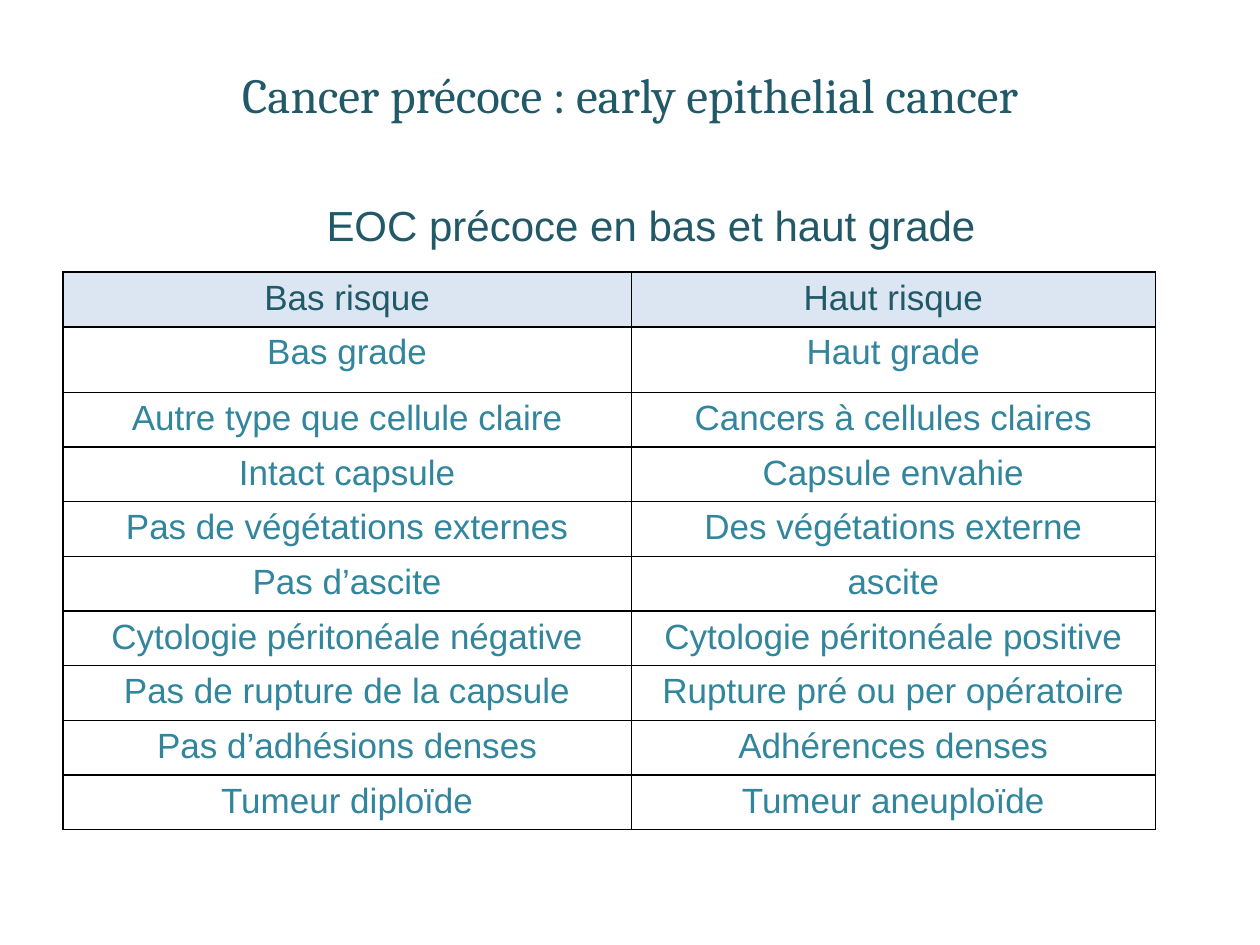
"""Build the slide comparing low and high risk early epithelial cancer."""
from dataclasses import dataclass

import pptx
import pptx.dml.color
import pptx.enum.text
import pptx.oxml
import pptx.oxml.ns
import pptx.util
from pptx.util import Pt


@dataclass(frozen=True)
class Theme:
    """Colours, fonts and type sizes of the slide."""
    dark: str = "215968"
    teal: str = "31859C"
    header: str = "DCE6F2"
    border: str = "000000"
    title_font: str = "Cambria"
    body_font: str = "Arial"
    title_size: int = 28
    subtitle_size: int = 24
    cell_size: int = 20


THEME = Theme()
ROWS = [
    ("Bas risque", "Haut risque"),
    ("Bas grade", "Haut grade"),
    ("Autre type que cellule claire", "Cancers à cellules claires"),
    ("Intact capsule", "Capsule envahie"),
    ("Pas de végétations externes", "Des végétations externe"),
    ("Pas d’ascite", "ascite"),
    ("Cytologie péritonéale négative", "Cytologie péritonéale positive"),
    ("Pas de rupture de la capsule", "Rupture pré ou per opératoire"),
    ("Pas d’adhésions denses", "Adhérences denses"),
    ("Tumeur diploïde", "Tumeur aneuploïde"),
]
COL_WIDTHS = (324.75, 299.5)
ROW_HEIGHT = 31.25
TALL_ROW, TALL_HEIGHT = 1, 37.5


def rgb(value):
    """Return the colour for a hex string."""
    return pptx.dml.color.RGBColor.from_string(value)


def write(tf, text, *, size, color=THEME.dark, font=THEME.body_font,
          line_spacing=None, space_before=None):
    """Write one centred, formatted paragraph into a text frame."""
    p = tf.paragraphs[0]
    p.alignment = pptx.enum.text.PP_ALIGN.CENTER
    p.line_spacing = line_spacing
    p.space_before = space_before
    r = p.add_run()
    r.text = text
    r.font.name = font
    r.font.size = Pt(size)
    r.font.color.rgb = rgb(color)


def add_text(s, text, box, anchor, **fmt):
    """Add a wrapping text box at box (left, top, width, height)."""
    tf = s.shapes.add_textbox(*map(Pt, box)).text_frame
    tf.word_wrap = True
    tf.vertical_anchor = anchor
    write(tf, text, **fmt)


def set_borders(cell, color, width):
    """Draw a solid line on all four sides of a cell."""
    tcPr = cell._tc.get_or_add_tcPr()
    for i, side in enumerate(("lnL", "lnR", "lnT", "lnB")):
        tcPr.insert(i, pptx.oxml.parse_xml(
            f'<a:{side} {pptx.oxml.ns.nsdecls("a")} w="{Pt(width)}">'
            f'<a:solidFill><a:srgbClr val="{color}"/></a:solidFill></a:{side}>'))


def fill_cell(cell, text, header):
    """Style a table cell as header or body and write its text."""
    if header:
        cell.fill.solid()
        cell.fill.fore_color.rgb = rgb(THEME.header)
    else:
        cell.fill.background()
    set_borders(cell, THEME.border, 1)
    write(cell.text_frame, text, size=THEME.cell_size, space_before=Pt(1),
          color=THEME.dark if header else THEME.teal)


def add_risk_table(s, left, top):
    """Add the two-column risk table."""
    heights = [TALL_HEIGHT if i == TALL_ROW else ROW_HEIGHT
               for i in range(len(ROWS))]
    table = s.shapes.add_table(len(ROWS), len(COL_WIDTHS), Pt(left), Pt(top),
                               Pt(sum(COL_WIDTHS)), Pt(sum(heights))).table
    table.horz_banding = False
    for col, width in zip(table.columns, COL_WIDTHS):
        col.width = Pt(width)
    for i, (row, height, texts) in enumerate(zip(table.rows, heights, ROWS)):
        row.height = Pt(height)
        for cell, text in zip(row.cells, texts):
            fill_cell(cell, text, header=i == 0)


def main():
    """Build and save the slide."""
    prs = pptx.Presentation()
    prs.slide_width, prs.slide_height = Pt(720), Pt(540)
    s = prs.slides.add_slide(prs.slide_layouts[6])
    anchors = pptx.enum.text.MSO_ANCHOR
    add_text(s, "EOC précoce en bas et haut grade", (36, 102, 672, 45),
             anchors.TOP, size=THEME.subtitle_size, line_spacing=1.3)
    add_risk_table(s, 36, 155.5)
    add_text(s, "Cancer précoce : early epithelial cancer", (54, 30, 612, 47.5),
             anchors.MIDDLE, size=THEME.title_size, font=THEME.title_font)
    prs.save("out.pptx")


if __name__ == "__main__":
    main()
